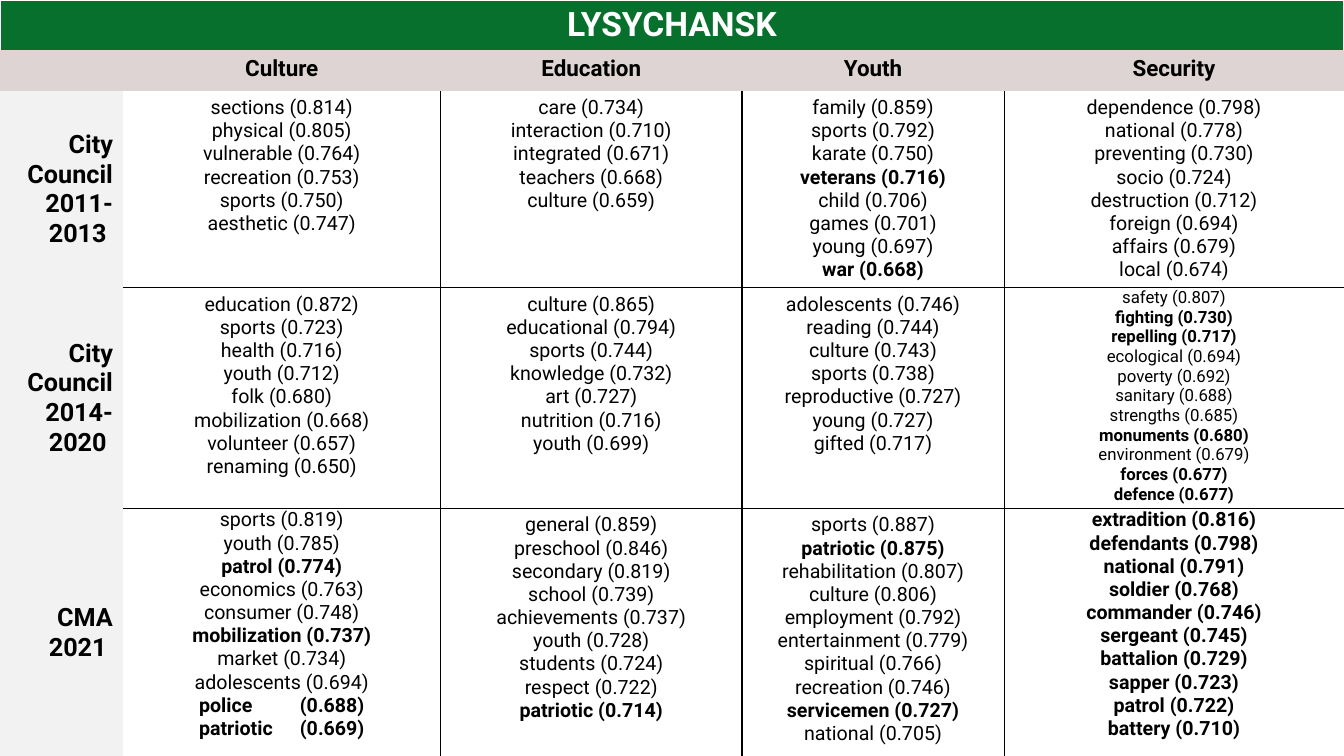
from dataclasses import dataclass

from lxml import etree
from pptx import Presentation
from pptx.dml.color import RGBColor
from pptx.enum import text
from pptx.oxml import ns
from pptx.util import Inches, Pt


@dataclass(frozen=True)
class Theme:
    font: str = "Roboto"
    green: str = "07702C"
    rose: str = "DED4D4"
    grey: str = "F2F2F2"
    white: str = "FFFFFF"
    black: str = "000000"
    title_size: int = 24
    label_size: int = 18
    heading_size: int = 16
    word_size: int = 14
    small_size: int = 12


THEME = Theme()
ALIGN = text.PP_ALIGN
MIDDLE = text.MSO_ANCHOR.MIDDLE
NO_STYLE_NO_GRID = "{2D5ABB26-0587-4C30-8999-92F81FD0307C}"
COLUMN_WIDTHS = [1.22, 3.15, 2.99, 2.6, 3.37]
ROW_HEIGHTS = [0.5, 0.4, 1.95, 2.19, 2.47]
TITLE = "LYSYCHANSK"
TOPICS = ["Culture", "Education", "Youth", "Security"]

# One entry per period: label lines, then the words of each topic; * marks bold.
PERIODS = [
    (["City Council", "2011-2013 "], [
        "sections 0.814, physical 0.805, vulnerable 0.764, recreation 0.753, "
        "sports 0.750, aesthetic 0.747",
        "care 0.734, interaction 0.710, integrated 0.671, teachers 0.668, culture 0.659",
        "family 0.859, sports 0.792, karate 0.750, *veterans 0.716, child 0.706, "
        "games 0.701, young 0.697, *war 0.668",
        "dependence 0.798, national 0.778, preventing 0.730, socio 0.724, "
        "destruction 0.712, foreign 0.694, affairs 0.679, local 0.674",
    ]),
    (["City Council", "2014-2020 "], [
        "education 0.872, sports 0.723, health 0.716, youth 0.712, folk 0.680, "
        "mobilization 0.668, volunteer 0.657, renaming 0.650",
        "culture 0.865, educational 0.794, sports 0.744, knowledge 0.732, art 0.727, "
        "nutrition 0.716, youth 0.699",
        "adolescents 0.746, reading 0.744, culture 0.743, sports 0.738, "
        "reproductive 0.727, young 0.727, gifted 0.717",
        "safety 0.807, *fighting 0.730, *repelling 0.717, ecological 0.694, "
        "poverty 0.692, sanitary 0.688, strengths 0.685, *monuments 0.680, "
        "environment 0.679, *forces 0.677, *defence 0.677",
    ]),
    (["CMA", "2021 "], [
        "sports 0.819, youth 0.785, *patrol 0.774, economics 0.763, consumer 0.748, "
        "*mobilization 0.737, market 0.734, adolescents 0.694, *police\t0.688, "
        "*patriotic\t0.669",
        "general 0.859, preschool 0.846, secondary 0.819, school 0.739, "
        "achievements 0.737, youth 0.728, students 0.724, respect 0.722, "
        "*patriotic 0.714",
        "sports 0.887, *patriotic 0.875, rehabilitation 0.807, culture 0.806, "
        "employment 0.792, entertainment 0.779, spiritual 0.766, recreation 0.746, "
        "*servicemen 0.727, national 0.705",
        "*extradition 0.816, *defendants 0.798, *national 0.791, *soldier 0.768, "
        "*commander 0.746, *sergeant 0.745, *battalion 0.729, *sapper 0.723, "
        "*patrol 0.722, *battery 0.710",
    ]),
]
# (period, topic) of the fullest cells
TIGHT_CELLS = {(1, 3), (2, 0), (2, 3)}
SMALL_CELLS = {(1, 3)}


def write(cell, lines, size, bold=True, color=THEME.black, align=ALIGN.CENTER):
    """Write one paragraph per line; a leading * makes that line bold."""
    frame = cell.text_frame
    for index, line in enumerate(lines):
        para = frame.paragraphs[0] if index == 0 else frame.add_paragraph()
        para.alignment = align
        span = para.add_run()
        span.text = line.removeprefix("*")
        span.font.name = THEME.font
        span.font.size = Pt(size)
        span.font.bold = bold or line.startswith("*")
        span.font.color.rgb = RGBColor.from_string(color)


def paint(cell, color):
    cell.fill.solid()
    cell.fill.fore_color.rgb = RGBColor.from_string(color)


def add_borders(cell, **colors):
    """Draw 1 pt borders; the keys L, R, T, B name the sides."""
    properties = cell._tc.get_or_add_tcPr()
    for side in "LRTB":
        if side in colors:
            line = etree.SubElement(properties, ns.qn(f"a:ln{side}"), w=str(Pt(1)))
            fill = etree.SubElement(line, ns.qn("a:solidFill"))
            etree.SubElement(fill, ns.qn("a:srgbClr"), val=colors[side])


def score_lines(words):
    return [f"{entry[:-5]}({entry[-5:]})" for entry in words.split(", ")]


def add_grid(page):
    frame = page.shapes.add_table(
        len(ROW_HEIGHTS), len(COLUMN_WIDTHS), Inches(0), Inches(0),
        Inches(sum(COLUMN_WIDTHS)), Inches(sum(ROW_HEIGHTS)))
    table = frame.table
    table.first_row = table.horz_banding = False
    table._tbl.tblPr.find(ns.qn("a:tableStyleId")).text = NO_STYLE_NO_GRID
    for column, width in zip(table.columns, COLUMN_WIDTHS):
        column.width = Inches(width)
    for row, height in zip(table.rows, ROW_HEIGHTS):
        row.height = Inches(height)
    return table


def fill_headings(table):
    title = table.cell(0, 0)
    title.merge(table.cell(0, len(TOPICS)))
    title.vertical_anchor = MIDDLE
    add_borders(title, L=THEME.white, R=THEME.white, T=THEME.white)
    paint(title, THEME.green)
    write(title, [TITLE], THEME.title_size, color=THEME.white)
    paint(table.cell(1, 0), THEME.rose)
    for column, topic in enumerate(TOPICS, start=1):
        cell = table.cell(1, column)
        paint(cell, THEME.rose)
        write(cell, [topic], THEME.heading_size)


def fill_label(cell, lines):
    cell.vertical_anchor = MIDDLE
    paint(cell, THEME.grey)
    write(cell, lines, THEME.label_size, align=ALIGN.RIGHT)


def fill_words(cell, words, period, topic):
    """Black lines between neighbouring cells, white ones on the outer edge."""
    borders = {
        "R": THEME.black if topic < len(TOPICS) - 1 else THEME.white,
        "B": THEME.black if period < len(PERIODS) - 1 else THEME.white,
    }
    if topic:
        borders["L"] = THEME.black
    if period:
        borders["T"] = THEME.black
    add_borders(cell, **borders)
    cell.fill.background()
    if (period, topic) in TIGHT_CELLS:
        cell.margin_left = cell.margin_right = Inches(0.07)
        cell.margin_top = cell.margin_bottom = Inches(0)
    size = THEME.small_size if (period, topic) in SMALL_CELLS else THEME.word_size
    write(cell, score_lines(words), size, bold=False)


def main():
    deck = Presentation()
    deck.slide_width, deck.slide_height = Inches(13.33), Inches(7.5)
    page = deck.slides.add_slide(deck.slide_layouts[6])
    table = add_grid(page)
    fill_headings(table)
    for period, (label, topics) in enumerate(PERIODS):
        fill_label(table.cell(period + 2, 0), label)
        for topic, words in enumerate(topics):
            fill_words(table.cell(period + 2, topic + 1), words, period, topic)
    deck.save("out.pptx")


if __name__ == "__main__":
    main()
